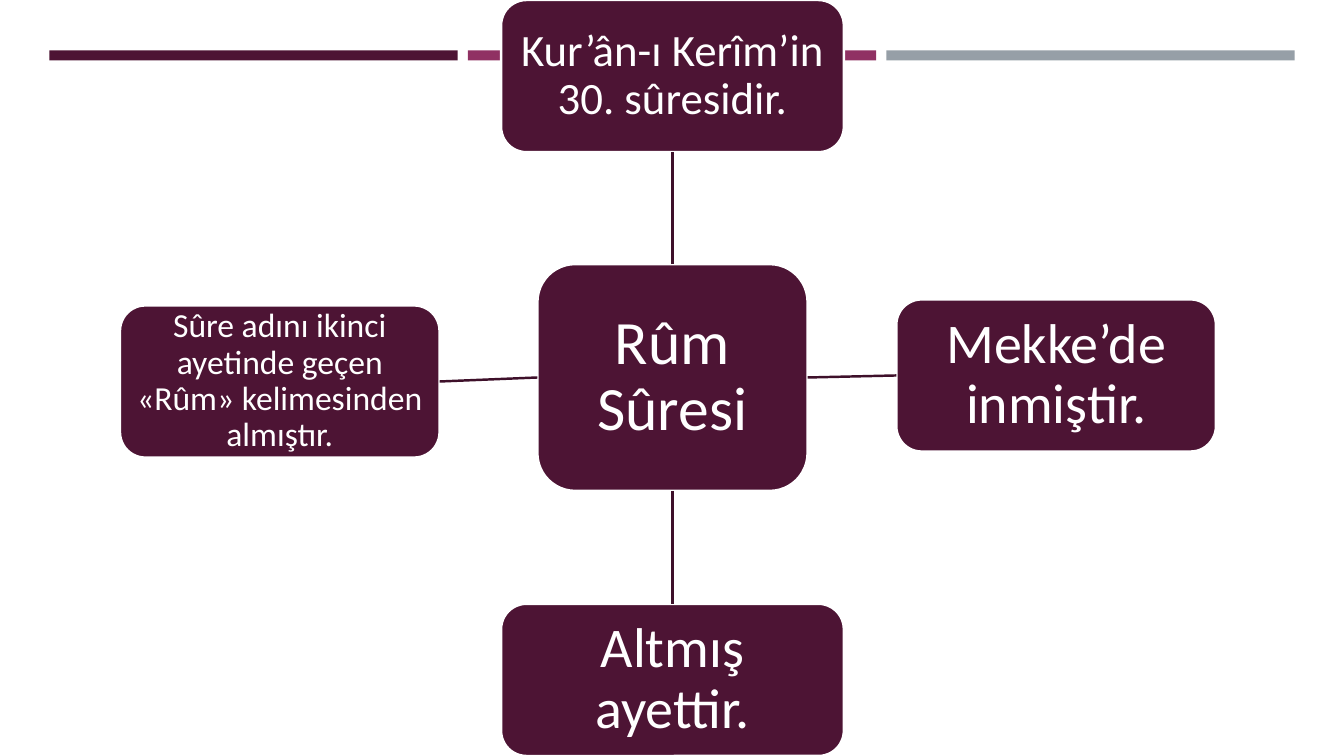
import dataclasses

import pptx
import pptx.dml.color
import pptx.enum.shapes
import pptx.enum.text
import pptx.oxml.ns
import pptx.util
from lxml import etree

SCALE = 9144  # EMU in one px, 100 px to the inch
SHAPES = pptx.enum.shapes.MSO_SHAPE
TOP, LEFT, BOTTOM, RIGHT = range(4)


def px(length):
    return pptx.util.Emu(length * SCALE)


def rgb(value):
    return pptx.dml.color.RGBColor.from_string(value)


@dataclasses.dataclass(frozen=True)
class Theme:
    font: str = "Calibri"
    plum: str = "4D1434"
    magenta: str = "903163"
    grey: str = "969FA7"
    link: str = "3E102A"
    white: str = "FFFFFF"
    line_width: float = 1.75
    topic_size: int = 44
    large_size: int = 40
    medium_size: int = 32
    small_size: int = 24


class Page:
    def __init__(self, deck, theme):
        self.theme = theme
        self.shapes = deck.slides.add_slide(deck.slide_layouts[6]).shapes

    def shape(self, kind, frame, color):
        shape = self.shapes.add_shape(kind, *map(px, frame))
        shape.shadow.inherit = False
        shape.fill.solid()
        shape.fill.fore_color.rgb = rgb(color)
        return shape

    def bar(self, left, color):
        bar = self.shape(SHAPES.RECTANGLE, (left, 50, 405, 10), color)
        bar.line.fill.background()

    def box(self, frame, text, size, inset):
        box = self.shape(SHAPES.ROUNDED_RECTANGLE, frame, self.theme.plum)
        box.line.color.rgb = rgb(self.theme.white)
        box.line.width = pptx.util.Pt(self.theme.line_width)
        content = box.text_frame
        content.word_wrap = True
        content.vertical_anchor = pptx.enum.text.MSO_ANCHOR.MIDDLE
        content.margin_left = content.margin_right = px(inset)
        content.margin_top = content.margin_bottom = px(inset)
        content.text = text
        para = content.paragraphs[0]
        para.alignment = pptx.enum.text.PP_ALIGN.CENTER
        para.line_spacing = 0.9
        para.font.name = self.theme.font
        para.font.size = pptx.util.Pt(size)
        para.font.color.rgb = rgb(self.theme.white)
        return box

    def link(self, start, start_side, end, end_side):
        """Join the middles of the given sides of two boxes."""
        link = self.shapes.add_connector(
            pptx.enum.shapes.MSO_CONNECTOR.STRAIGHT, 0, 0, 0, 0)
        link.begin_connect(start, start_side)
        link.end_connect(end, end_side)
        link.line.color.rgb = rgb(self.theme.link)
        link.line.width = pptx.util.Pt(self.theme.line_width)
        etree.SubElement(link._element.spPr, pptx.oxml.ns.qn("a:effectLst"))


def main():
    deck = pptx.Presentation()
    deck.slide_width, deck.slide_height = px(1333), px(750)
    theme = Theme()
    page = Page(deck, theme)

    for index, color in enumerate((theme.plum, theme.magenta, theme.grey)):
        page.bar(49 + index * 415, color)

    topic = page.box((533, 262, 268, 225), "Rûm Sûresi", theme.topic_size, 12)
    facts = (
        ((497, 0, 340, 151), "Kur’ân-ı Kerîm’in 30. sûresidir.",
         theme.medium_size, 9, TOP, BOTTOM),
        ((889, 297, 317, 151), "Mekke’de inmiştir.",
         theme.large_size, 11, RIGHT, LEFT),
        ((497, 599, 340, 151), "Altmış ayettir.",
         theme.large_size, 11, BOTTOM, TOP),
        ((119, 303, 317, 151),
         "Sûre adını ikinci ayetinde geçen «Rûm» kelimesinden almıştır.",
         theme.small_size, 7, LEFT, RIGHT),
    )
    for frame, text, size, inset, topic_side, fact_side in facts:
        fact = page.box(frame, text, size, inset)
        page.link(topic, topic_side, fact, fact_side)

    deck.save("out.pptx")


if __name__ == "__main__":
    main()
